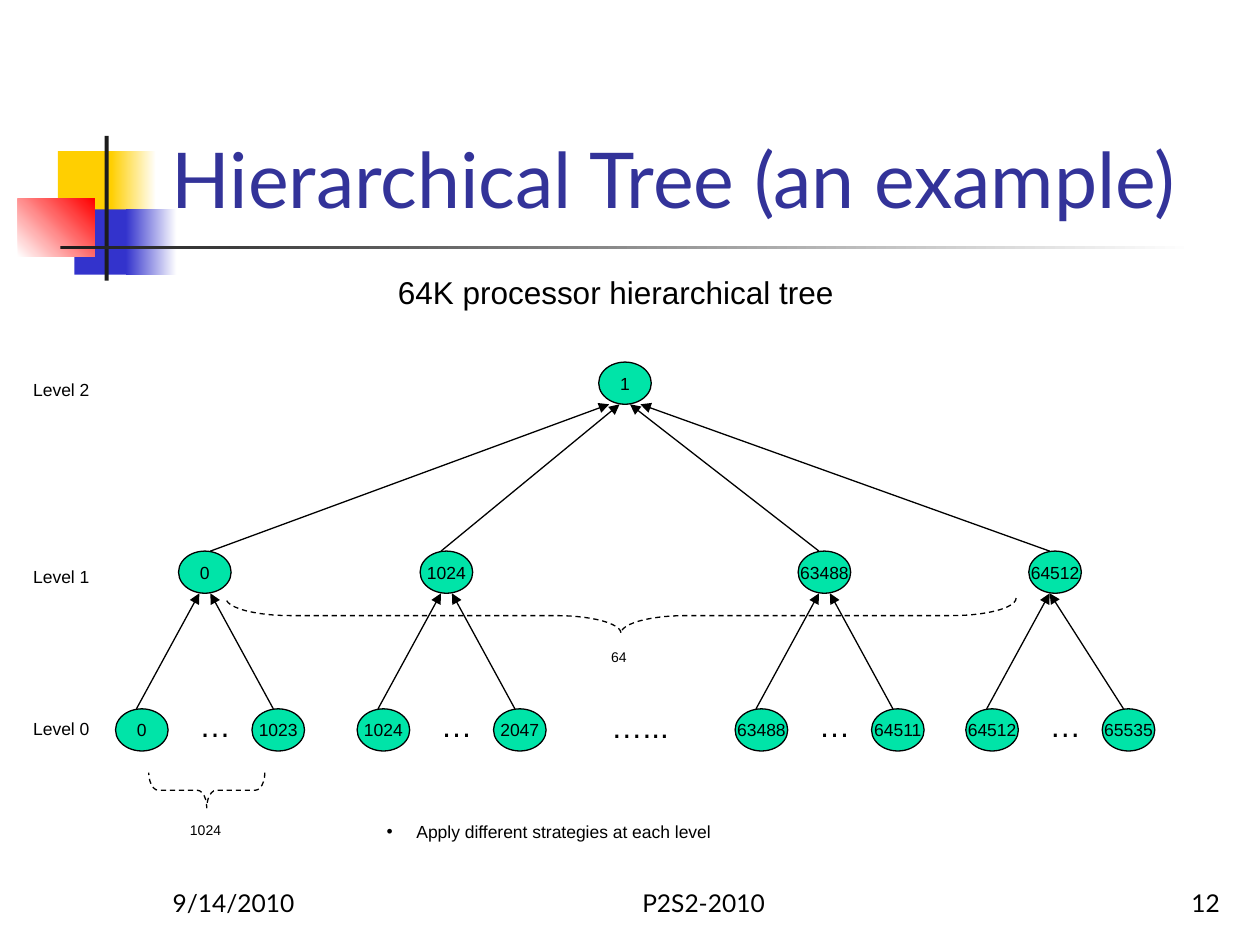
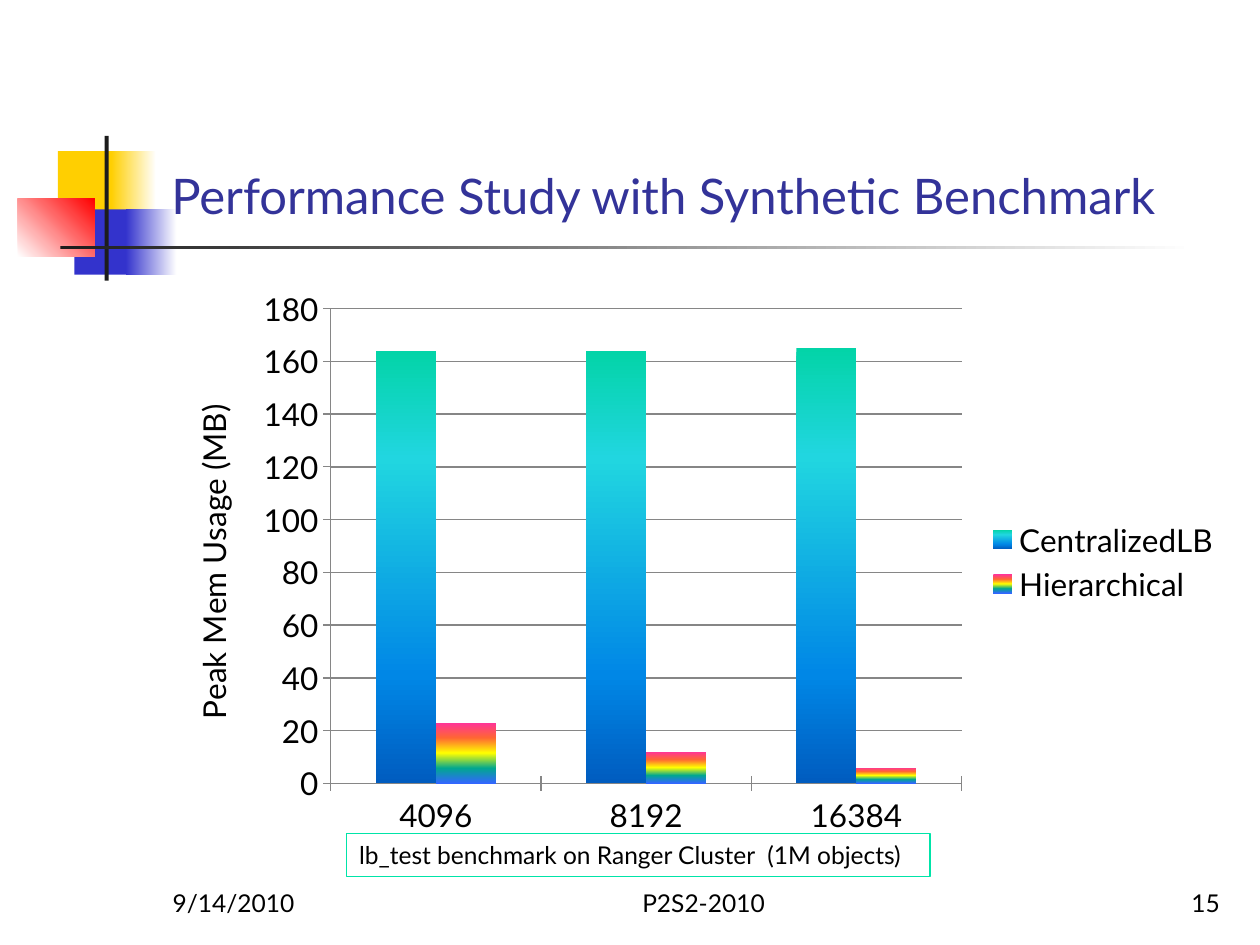
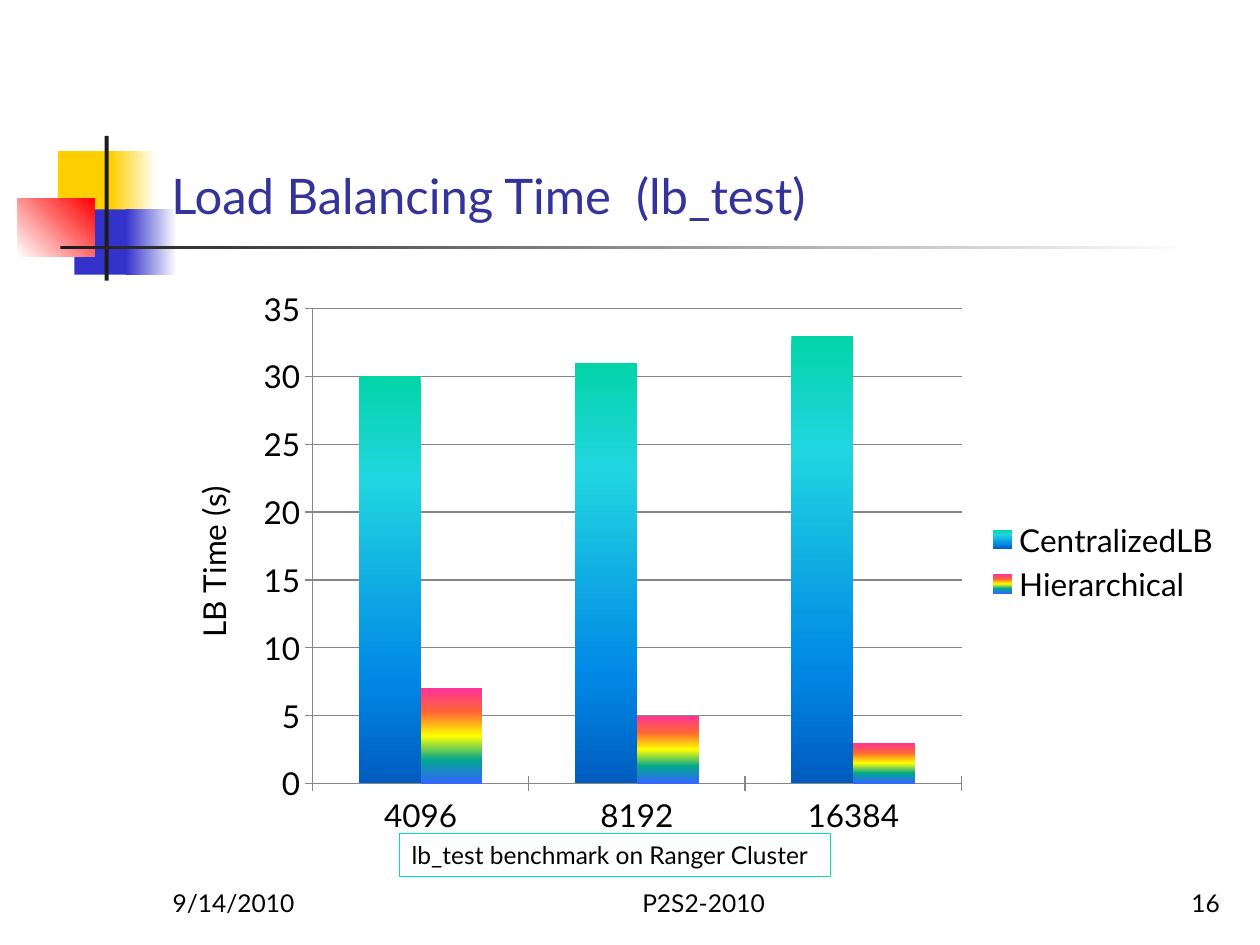
from lxml import etree
from pptx import Presentation, util as u
from pptx.chart.data import CategoryChartData
from pptx.dml.color import RGBColor
from pptx.enum import chart as ch, dml, shapes, text
from pptx.oxml.ns import qn

BLACK = RGBColor(0, 0, 0)
WHITE = RGBColor(0xFF, 0xFF, 0xFF)
INK = RGBColor(0x1C, 0x1C, 0x1C)
YELLOW = RGBColor(0xFF, 0xCF, 0x01)
BLUE = RGBColor(0x33, 0x33, 0xCC)
RED = RGBColor(0xFF, 0, 0)
NAVY = RGBColor(0x33, 0x33, 0x99)
GREEN = RGBColor(0, 0xE4, 0xA8)
GRAY = RGBColor(0x86, 0x86, 0x86)

OCEAN = [(0, RGBColor(0x03, 0xD4, 0xA8)), (25, RGBColor(0x21, 0xD6, 0xE0)),
         (75, RGBColor(0, 0x87, 0xE6)), (100, RGBColor(0, 0x5C, 0xBF))]
RAINBOW = [(0, RGBColor(0xFF, 0x33, 0x99)), (25, RGBColor(0xFF, 0x66, 0x33)),
           (50, RGBColor(0xFF, 0xFF, 0)), (75, RGBColor(0x01, 0xA7, 0x8F)),
           (100, RGBColor(0x33, 0x66, 0xFF))]

ARIAL, LATO = "Arial", "Lato"
LEFT, CENTER, RIGHT = text.PP_ALIGN.LEFT, text.PP_ALIGN.CENTER, text.PP_ALIGN.RIGHT
TOP, MIDDLE, BOTTOM = text.MSO_ANCHOR.TOP, text.MSO_ANCHOR.MIDDLE, text.MSO_ANCHOR.BOTTOM

TITLE_BOX = (3.2, 0.58, 21.64, 4.06)
CHART_BOX = (3.28, 5.61, 21.59, 11.43)
FOOTER_TOP, FOOTER_HEIGHT = 17.35, 1.27
NODE_W, NODE_H = 1.06, 0.85
LEVEL_1, LEVEL_0 = 3.81, 6.99


def cm(*lengths):
    return [u.Cm(n) for n in lengths]


def place(sp, box):
    sp.left, sp.top, sp.width, sp.height = cm(*box)


def write(tf, words, size, font=ARIAL, color=BLACK, align=LEFT, anchor=TOP, wrap=False):
    tf.text = words
    tf.word_wrap = wrap
    tf.vertical_anchor = anchor
    p = tf.paragraphs[0]
    p.alignment = align
    p.font.size = u.Pt(size)
    p.font.name = font
    p.font.color.rgb = color
    return p


def label(s, box, words, size, font=ARIAL):
    sp = s.shapes.add_textbox(*cm(*box))
    write(sp.text_frame, words, size, font)
    sp.text_frame.auto_size = text.MSO_AUTO_SIZE.SHAPE_TO_FIT_TEXT
    return sp


def gradient(fill, owner, stops, clockwise):
    fill.gradient()
    fill.gradient_angle = (360 - clockwise) % 360
    stop_list = list(owner.iter(qn("a:gsLst")))[-1]
    for old in list(stop_list):
        stop_list.remove(old)
    for pos, color in stops:
        stop = etree.SubElement(stop_list, qn("a:gs"), pos=str(pos * 1000))
        etree.SubElement(stop, qn("a:srgbClr"), val=str(color))


def add_master_band(prs, s):
    band = [
        ((1.17, 3.05, 1.22, 1.32), YELLOW, None, 0),
        ((2.24, 3.05, 0.91, 1.32), YELLOW, WHITE, 0),
        ((1.5, 4.22, 1.17, 1.32), BLUE, None, 0),
        ((2.54, 4.22, 1.02, 1.32), BLUE, WHITE, 0),
        ((0.36, 4.01, 1.55, 1.17), WHITE, RED, 315),
        ((2.11, 2.74, 0.08, 2.92), INK, None, 0),
        ((1.22, 4.95, 22.86, 0.08), INK, WHITE, 0),
    ]
    tree = prs.slide_master.shapes.element
    for i, (box, start, end, angle) in enumerate(band):
        sp = s.shapes.add_shape(shapes.MSO_SHAPE.RECTANGLE, *cm(*box))
        sp.shadow.inherit = False
        sp.line.fill.background()
        if end is None:
            sp.fill.solid()
            sp.fill.fore_color.rgb = start
        else:
            gradient(sp.fill, sp.element, [(0, start), (100, end)], angle)
        tree.insert(2 + i, sp.element)


def add_title(s, words, size):
    sp = s.shapes.title
    place(sp, TITLE_BOX)
    write(sp.text_frame, words, size, LATO, NAVY, LEFT, BOTTOM, True)
    sp.text_frame.auto_size = text.MSO_AUTO_SIZE.NONE


def add_footer(s, number):
    parts = [(3.23, 5.28, "9/14/2010", LEFT), (10.16, 8.05, "P2S2-2010", CENTER),
             (19.56, 5.28, str(number), RIGHT)]
    for left, width, words, align in parts:
        sp = s.shapes.add_textbox(*cm(left, FOOTER_TOP, width, FOOTER_HEIGHT))
        write(sp.text_frame, words, 14, LATO, BLACK, align, BOTTOM, True)


def add_node(s, left, top, words):
    sp = s.shapes.add_shape(shapes.MSO_SHAPE.OVAL, *cm(left, top, NODE_W, NODE_H))
    sp.shadow.inherit = False
    sp.fill.solid()
    sp.fill.fore_color.rgb = GREEN
    sp.line.color.rgb = BLACK
    sp.line.width = u.Pt(0.75)
    write(sp.text_frame, words, 10, align=CENTER, anchor=MIDDLE)


def add_arrow(s, x1, y1, x2, y2):
    line = s.shapes.add_connector(shapes.MSO_CONNECTOR.STRAIGHT, *cm(x1, y1, x2, y2))
    line.line.color.rgb = BLACK
    line.line.width = u.Pt(0.75)
    sp_pr = line.element.spPr
    etree.SubElement(sp_pr.find(qn("a:ln")), qn("a:tailEnd"), type="triangle")
    etree.SubElement(sp_pr, qn("a:effectLst"))


def add_brace(s, center_x, center_y, length, curve):
    depth = 0.71
    sp = s.shapes.add_shape(shapes.MSO_SHAPE.LEFT_BRACE, *cm(
        center_x - depth / 2, center_y - length / 2, depth, length))
    sp.shadow.inherit = False
    sp.adjustments[0] = curve
    sp.rotation = 270
    sp.fill.background()
    sp.line.color.rgb = BLACK
    sp.line.width = u.Pt(0.75)
    sp.line.dash_style = dml.MSO_LINE.DASH


def add_subtree(s, left, top, parent, last, right_end):
    leaf_top = top + LEVEL_0 - LEVEL_1
    add_node(s, left, leaf_top, parent)
    label(s, (left + 1.44, leaf_top - 0.19, 1.14, 1.02), "…", 18)
    add_node(s, left + 2.75, leaf_top, last)
    add_node(s, left + 1.27, top, parent)
    add_arrow(s, left + 0.42, leaf_top, left + 1.69, top + NODE_H)
    add_arrow(s, left + 3.18, leaf_top, left + right_end, top + NODE_H)


def add_tree(s, left, top):
    subtrees = [(0, "0", "1023", 1.91, 1.91), (4.87, "1024", "2047", 1.91, 1.69),
                (12.49, "63488", "64511", 1.91, 1.69),
                (17.14, "64512", "65535", 1.69, 1.69)]
    add_node(s, left + 9.74, top, "1")
    for i, (offset, parent, last, right_end, root_start) in enumerate(subtrees):
        x = left + offset
        add_subtree(s, x, top + LEVEL_1, parent, last, right_end)
        add_arrow(s, x + root_start, top + LEVEL_1,
                  left + 9.95 + 0.21 * i, top + NODE_H)
    label(s, (left + 9.74, top + LEVEL_0 - 0.17, 1.68, 1.02), "…...", 18)
    for words, offset in [("Level 2", 0.22), ("Level 1", 3.98), ("Level 0", 7.05)]:
        label(s, (left - 1.91, top + offset, 1.65, 0.69), words, 10)
    add_brace(s, left + 1.84, top + 8.63, 2.34, 0.27)
    label(s, (left + 1.25, top + 9.13, 1.14, 0.58), "1024", 8)
    add_brace(s, left + 10.19, top + 5.11, 15.93, 1.84)
    label(s, (left + 9.74, top + 5.65, 0.84, 0.58), "64", 8)


def add_tree_slide(prs, s):
    add_title(s, "Hierarchical Tree (an example)", 44)
    body = s.placeholders[1]
    place(body, (7.54, 16.43, 12.7, 0.69))
    p = write(body.text_frame, "Apply different strategies at each level", 10, wrap=True)
    body.text_frame.auto_size = text.MSO_AUTO_SIZE.NONE
    p.space_before = u.Pt(0)
    p_pr = p.font and body.element.find(".//" + qn("a:pPr"))
    p_pr.set("marL", str(u.Cm(0.6)))
    p_pr.set("indent", str(-u.Cm(0.6)))
    add_tree(s, 2.33, 7.3)
    label(s, (7.77, 5.38, 9.3, 1.02), "64K processor hierarchical tree", 18)
    add_footer(s, 12)


def add_chart(s, box, axis_title, maximum, step, series):
    data = CategoryChartData()
    data.categories = ["4096", "8192", "16384"]
    for name, values, _ in series:
        data.add_series(name, values)
    chart = s.shapes.add_chart(ch.XL_CHART_TYPE.COLUMN_CLUSTERED, *cm(*box), data).chart
    chart.font.size = u.Pt(18)
    chart.font.name = LATO
    chart.font.color.rgb = BLACK
    chart.has_title = False
    chart.has_legend = True
    chart.legend.position = ch.XL_LEGEND_POSITION.RIGHT
    chart.legend.include_in_layout = False

    plot = chart.plots[0]
    plot.vary_by_categories = False
    plot.gap_width = 150
    for ser, (_, _, stops) in zip(plot.series, series):
        gradient(ser.format.fill, chart.element, stops, 90)

    axis = chart.value_axis
    axis.minimum_scale, axis.maximum_scale, axis.major_unit = 0, maximum, step
    axis.has_major_gridlines = True
    tf = axis.axis_title.text_frame
    tf.text = axis_title
    font = tf.paragraphs[0].font
    font.size, font.name, font.bold = u.Pt(18), LATO, False
    font.color.rgb = BLACK
    for ax in (axis, chart.category_axis):
        ax.major_tick_mark = ch.XL_TICK_MARK.CROSS
    for part in (axis, chart.category_axis, axis.major_gridlines):
        part.format.line.color.rgb = GRAY
        part.format.line.width = u.Pt(0.75)


def add_chart_slide(s, number, title, axis_title, scale, central, hierarchical,
                    caption, caption_box):
    add_title(s, title, 28)
    add_chart(s, CHART_BOX, axis_title, *scale,
              [("CentralizedLB", central, OCEAN), ("Hierarchical", hierarchical, RAINBOW)])
    sp = label(s, caption_box, caption, 14, LATO)
    sp.line.color.rgb = GREEN
    sp.line.width = u.Pt(0.75)
    add_footer(s, number)


def main():
    prs = Presentation()
    prs.slide_width, prs.slide_height = cm(25.4, 19.05)
    list_layout, title_layout = prs.slide_layouts[1], prs.slide_layouts[5]
    s = prs.slides.add_slide(list_layout)
    add_master_band(prs, s)
    add_tree_slide(prs, s)
    add_chart_slide(prs.slides.add_slide(title_layout), 15,
                    "Performance Study with Synthetic Benchmark",
                    "Peak Mem Usage (MB)", (180, 20), (164, 164, 165), (23, 12, 6),
                    "lb_test benchmark on Ranger Cluster  (1M objects)",
                    (6.99, 16.81, 11.76, 0.86))
    add_chart_slide(prs.slides.add_slide(title_layout), 16,
                    "Load Balancing Time  (lb_test)",
                    "LB Time (s)", (35, 5), (30, 31, 33), (7, 5, 3),
                    "lb_test benchmark on Ranger Cluster",
                    (8.05, 16.81, 8.69, 0.86))
    prs.save("out.pptx")


if __name__ == "__main__":
    main()
